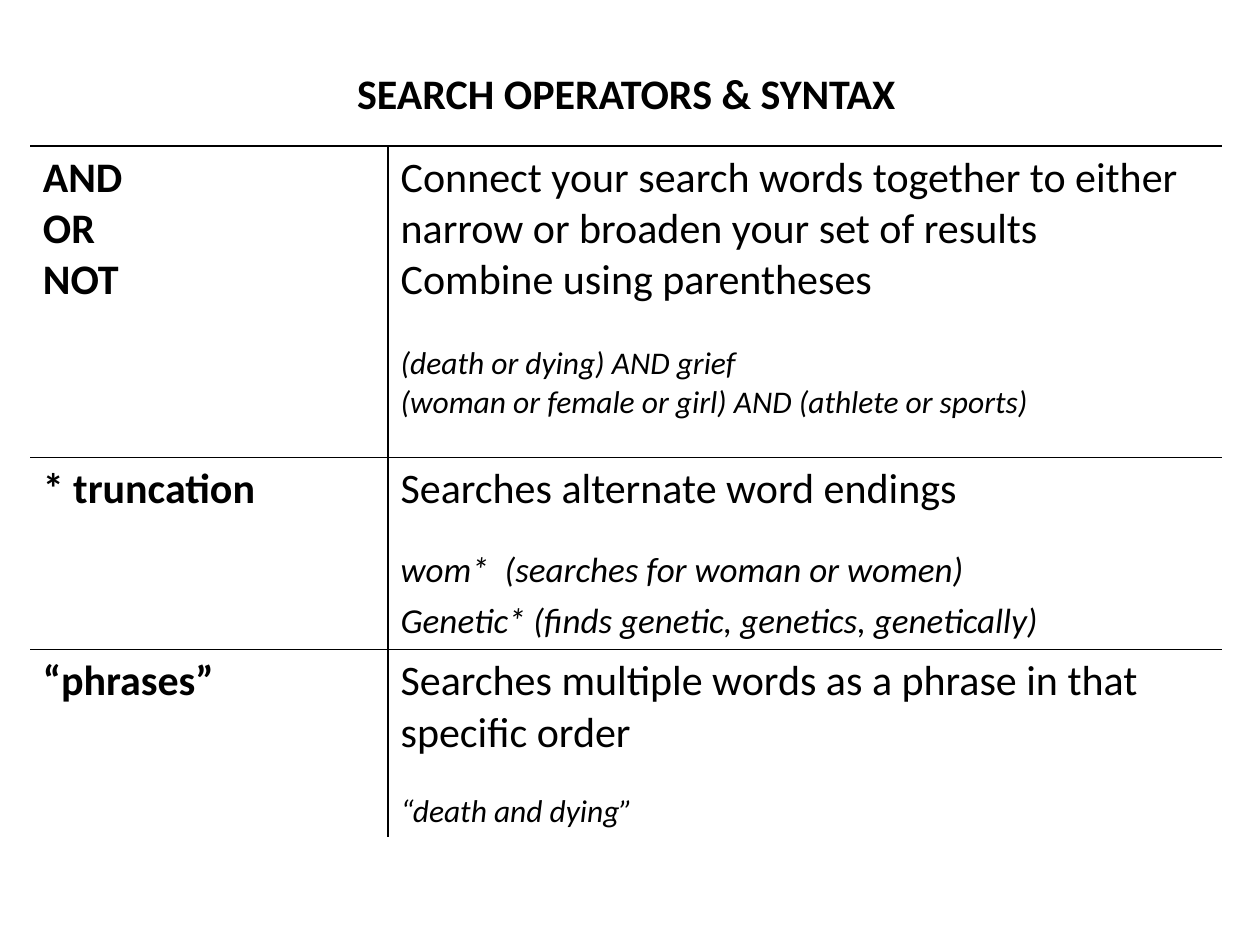
from lxml import etree
from pptx import Presentation, util as u
from pptx.dml.color import RGBColor
from pptx.enum import text
from pptx.oxml.ns import qn

BLACK = RGBColor(0, 0, 0)
FONT = "Calibri"
COLS = (2.84, 6.62)
ROWS = (0.66, 2.47, 1.5, 1.47)
BOX = (0.24, 0.5, sum(COLS), sum(ROWS))

BOLD = dict(bold=True)
TITLE = "SEARCH OPERATORS & SYNTAX"
# Each row: operator names, then lines of (text, format)
BODY = [
    (["AND", "OR", "NOT"], [
        ("Connect your search words together to either narrow or broaden "
         "your set of results", {}),
        ("Combine using parentheses", {}),
        ("(death or dying) AND grief", dict(size=18, italic=True, gap=22)),
        ("(woman or female or girl) AND (athlete or sports)",
         dict(size=18, italic=True)),
    ]),
    (["* truncation"], [
        ("Searches alternate word endings", {}),
        ("wom*  (searches for woman or women)",
         dict(size=20, italic=True, gap=19.5)),
        ("Genetic* (finds genetic, genetics, genetically)",
         dict(size=20, italic=True, gap=4.9)),
    ]),
    (["“phrases”"], [
        ("Searches multiple words as a phrase in that specific order", {}),
        ("“death and dying”", dict(size=18, italic=True, gap=19.5)),
    ]),
]


def write(para, words, size=24, bold=False, italic=False, gap=0,
          align=text.PP_ALIGN.LEFT):
    """Fill one paragraph with formatted text."""
    para.alignment = align
    para.space_before = u.Pt(gap)
    run = para.add_run()
    run.text = words
    font = run.font
    font.name, font.size = FONT, u.Pt(size)
    font.bold, font.italic = bold, italic
    font.color.rgb = BLACK


def fill(cell, lines):
    """Write a list of (text, format) lines into a cell."""
    frame = cell.text_frame
    for i, (words, form) in enumerate(lines):
        para = frame.add_paragraph() if i else frame.paragraphs[0]
        write(para, words, **form)


def edge(cell, sides):
    """Draw the named sides in black and clear the others."""
    cell.fill.background()
    props = cell._tc.get_or_add_tcPr()
    for i, side in enumerate("LRTB"):
        line = etree.Element(qn("a:ln" + side), w=str(u.Pt(1)))
        if side in sides:
            paint = etree.SubElement(line, qn("a:solidFill"))
            etree.SubElement(paint, qn("a:srgbClr"), val=str(BLACK))
        else:
            etree.SubElement(line, qn("a:noFill"))
        props.insert(i, line)


def draw_table(slide, box):
    """Place the table of operators in the given box."""
    frame = slide.shapes.add_table(len(ROWS), len(COLS),
                                   *(u.Inches(n) for n in box))
    table = frame.table
    table.first_row = table.horz_banding = False
    for col, width in zip(table.columns, COLS):
        col.width = u.Inches(width)
    for row, height in zip(table.rows, ROWS):
        row.height = u.Inches(height)

    # Title row across both columns
    head = table.cell(0, 0)
    head.merge(table.cell(0, 1))
    fill(head, [(TITLE, dict(bold=True, align=text.PP_ALIGN.CENTER))])

    # Operators and what they do
    for r, (names, notes) in enumerate(BODY, 1):
        fill(table.cell(r, 0), [(name, BOLD) for name in names])
        fill(table.cell(r, 1), notes)

    # Rules between rows, and between columns below the title
    for r in range(len(ROWS)):
        for c in range(len(COLS)):
            sides = "B" if r < len(ROWS) - 1 else ""
            if r:
                sides += "T" + ("L" if c else "R")
            edge(table.cell(r, c), sides)


def main():
    deck = Presentation()
    deck.slide_width, deck.slide_height = u.Inches(10), u.Inches(7.5)
    slide = deck.slides.add_slide(deck.slide_layouts[6])
    draw_table(slide, BOX)
    deck.save("out.pptx")


if __name__ == "__main__":
    main()
